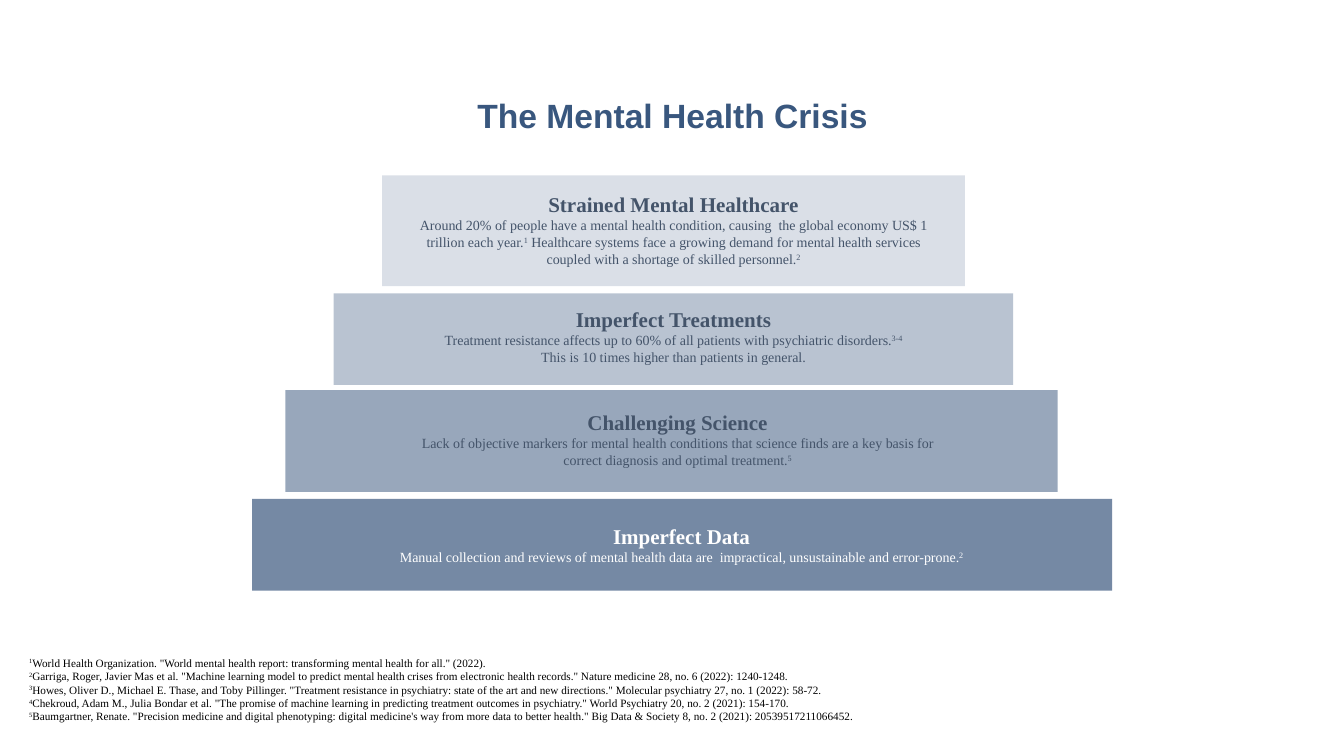
from lxml import etree
from pptx import Presentation
from pptx import util as u
from pptx.dml.color import RGBColor
from pptx.enum import shapes, text
from pptx.oxml.ns import qn

COLORS = {"navy": "3D5A80", "title": "39577E", "slate": "44546A",
          "white": "FFFFFF", "black": "000000"}
SERIF, SANS = "Times New Roman", "Arial"


class SlideBuilder:
    """Holds the style and the current slide."""

    def __init__(self, prs):
        self.slide = prs.slides.add_slide(prs.slide_layouts[6])

    def color(self, name):
        return RGBColor.from_string(COLORS[name])

    def band(self, parent, box, opacity):
        sp = parent.shapes.add_shape(shapes.MSO_SHAPE.RECTANGLE,
                                     *map(u.Inches, box))
        sp.shadow.inherit = False
        sp.line.fill.background()
        sp.fill.solid()
        sp.fill.fore_color.rgb = self.color("navy")
        clr = sp._element.spPr.find(qn("a:solidFill"))[0]
        etree.SubElement(clr, qn("a:alpha")).set("val", str(opacity * 1000))

    def textbox(self, parent, box, lines, color, font=SERIF, centered=True,
                inset=0.05):
        """Each line is (text, size, bold); ^marks^ enclose superscripts."""
        sp = parent.shapes.add_textbox(*map(u.Inches, box))
        tf = sp.text_frame
        tf.word_wrap = True
        tf.vertical_anchor = text.MSO_ANCHOR.TOP
        tf.margin_left = tf.margin_right = u.Inches(0.1)
        tf.margin_top = tf.margin_bottom = u.Inches(inset)
        for i, (line, size, bold) in enumerate(lines):
            p = tf.paragraphs[0] if i == 0 else tf.add_paragraph()
            p.alignment = text.PP_ALIGN.CENTER if centered else text.PP_ALIGN.LEFT
            for j, part in enumerate(line.split("^")):
                if not part:
                    continue
                r = p.add_run()
                r.text = part
                r.font.name, r.font.size, r.font.bold = font, u.Pt(size), bold
                r.font.color.rgb = self.color(color)
                if j % 2:
                    r._r.get_or_add_rPr().set("baseline", "30000")

    def tier(self, band, opacity, box, color, heading, body):
        group = self.slide.shapes.add_group_shape()
        self.band(group, band, opacity)
        lines = [(heading, 15, True)] + [(line, 10, False) for line in body]
        self.textbox(group, box, lines, color, inset=0.1)


# Pyramid tiers, top to bottom: band, opacity, text box, colour, heading, body
TIERS = [
    ((3.79, 1.74, 5.78, 1.1), 19, (4.04, 1.8, 5.28, 0.97), "slate",
     "Strained Mental Healthcare",
     ["Around 20% of people have a mental health condition, causing  the global "
      "economy US$ 1 trillion each year.^1^ Healthcare systems face a growing "
      "demand for mental health services coupled with a shortage of skilled "
      "personnel.^2^"]),
    ((3.31, 2.91, 6.74, 0.91), 36, (3.79, 2.94, 5.78, 0.8), "slate",
     "Imperfect Treatments",
     ["Treatment resistance affects up to 60% of all patients with psychiatric "
      "disorders.^3-4^",
      "This is 10 times higher than patients in general."]),
    ((2.83, 3.87, 7.66, 1.01), 53, (3.83, 3.96, 5.78, 0.85), "slate",
     "Challenging Science",
     ["Lack of objective markers for mental health conditions that science finds "
      "are a key basis for",
      "correct diagnosis and optimal treatment.^5^"]),
    ((2.5, 4.95, 8.53, 0.91), 71, (3.09, 5.09, 7.34, 0.64), "white",
     "Imperfect Data",
     ["Manual collection and reviews of mental health data are  impractical, "
      "unsustainable and error-prone.^2^"]),
]

REFERENCES = [
    'World Health Organization. "World mental health report: transforming mental '
    'health for all." (2022).',
    'Garriga, Roger, Javier Mas et al. "Machine learning model to predict mental '
    'health crises from electronic health records." Nature medicine 28, no. 6 '
    '(2022): 1240-1248.',
    'Howes, Oliver D., Michael E. Thase, and Toby Pillinger. "Treatment resistance '
    'in psychiatry: state of the art and new directions." Molecular psychiatry 27, '
    'no. 1 (2022): 58-72.',
    'Chekroud, Adam M., Julia Bondar et al. "The promise of machine learning in '
    'predicting treatment outcomes in psychiatry." World Psychiatry 20, no. 2 '
    '(2021): 154-170.',
    'Baumgartner, Renate. "Precision medicine and digital phenotyping: digital '
    'medicine\'s way from more data to better health." Big Data & Society 8, no. 2 '
    '(2021): 20539517211066452.',
]


def main():
    prs = Presentation()
    prs.slide_width, prs.slide_height = u.Inches(13.33), u.Inches(7.5)
    s = SlideBuilder(prs)

    # Title
    s.textbox(s.slide, (0.86, 0.89, 11.62, 0.5),
              [("The Mental Health Crisis", 24, True)], "title", font=SANS)

    # Pyramid
    for tier in TIERS:
        s.tier(*tier)

    # Numbered references
    notes = [(f"^{n}^{ref}", 8, False) for n, ref in enumerate(REFERENCES, 1)]
    s.textbox(s.slide, (0.19, 6.46, 12.91, 0.91), notes, "black", centered=False)

    prs.save("out.pptx")


if __name__ == "__main__":
    main()
